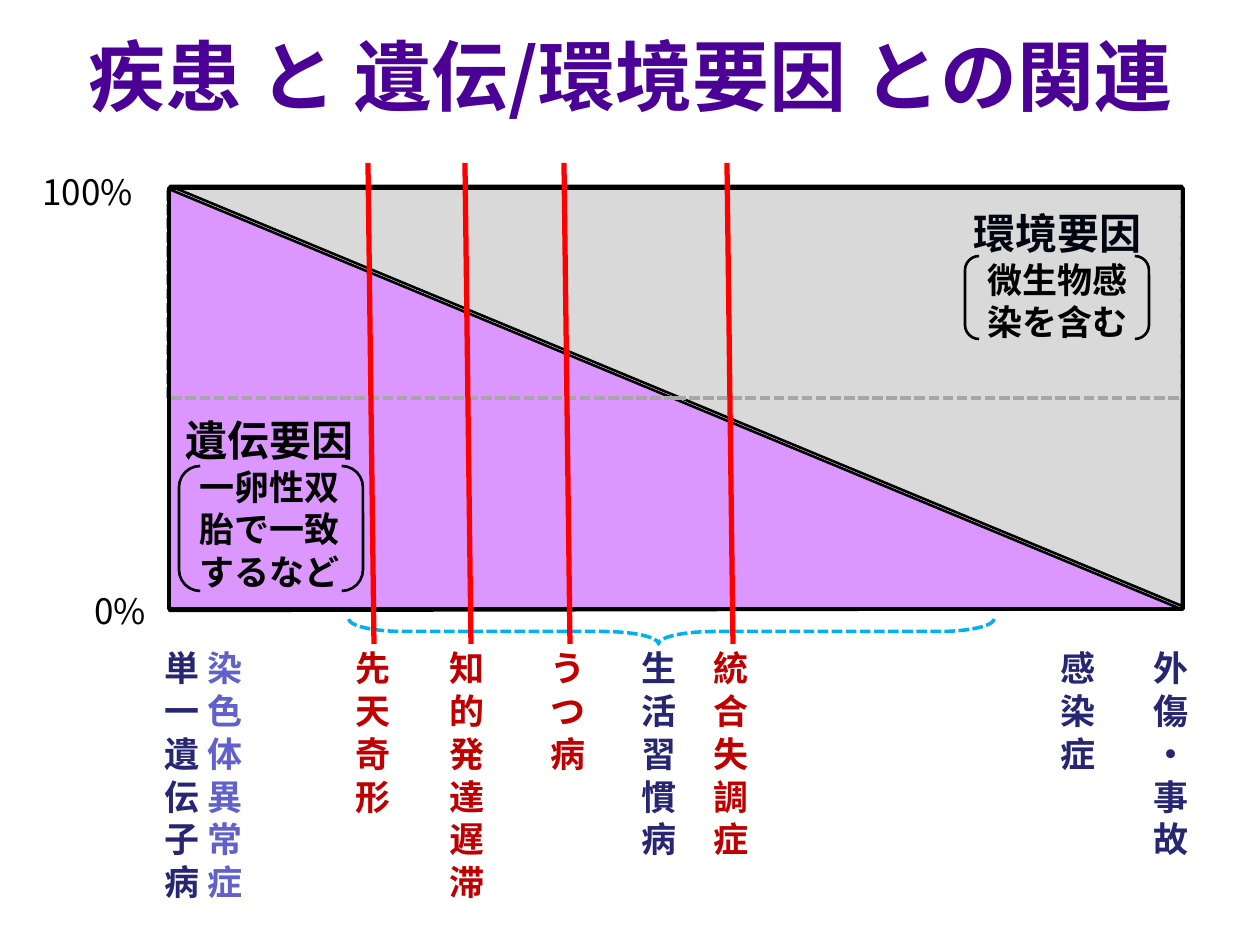
"""Build a slide relating diseases to genetic and environmental factors."""
from dataclasses import dataclass

from lxml import etree
from pptx import Presentation
from pptx.dml.color import RGBColor
from pptx.enum.dml import MSO_LINE
from pptx.enum.shapes import MSO_CONNECTOR, MSO_SHAPE
from pptx.enum.text import MSO_AUTO_SIZE, PP_ALIGN
from pptx.oxml.ns import qn
from pptx.util import Emu, Pt

STRAIGHT = MSO_CONNECTOR.STRAIGHT
BRACE = MSO_SHAPE.LEFT_BRACE
BRACKETS = MSO_SHAPE.DOUBLE_BRACKET
RECTANGLE = MSO_SHAPE.RECTANGLE
TRIANGLE = MSO_SHAPE.RIGHT_TRIANGLE
DASH = MSO_LINE.SQUARE_DOT
LEFT = PP_ALIGN.LEFT
CENTER = PP_ALIGN.CENTER
FIT_SHAPE = MSO_AUTO_SIZE.SHAPE_TO_FIT_TEXT
EMU_PER_PX = 914400 / 126


@dataclass(frozen=True)
class Theme:
    """Hold the colours, font and type sizes."""
    font: str = "Noto Sans CJK JP"
    title_size: int = 44
    heading_size: int = 24
    body_size: int = 20
    line_ratio: float = 1.22
    title: str = "4B0096"
    ink: str = "000000"
    environment_heading: str = "000510"
    genetic_fill: str = "DC97FF"
    environment_fill: str = "D9D9D9"
    midline: str = "A6A6A6"
    brace: str = "00B0F0"
    marker: str = "FF0000"
    disease: str = "262673"
    chromosome: str = "6161CB"
    marked_disease: str = "C00000"


THEME = Theme()


def px(length):
    """Turn pixels into EMU."""
    return Emu(round(length * EMU_PER_PX))


def rgb(color):
    """Turn a hex string into a colour."""
    return RGBColor.from_string(color)


def add_outline(slide, kind, box, color, width, fill=None, dash=None, rotation=0, adjustments=()):
    """Add a preset shape with a line and an optional fill."""
    shape = slide.shapes.add_shape(kind, *map(px, box))
    shape.shadow.inherit = False
    shape.rotation = rotation
    for index, value in enumerate(adjustments):
        shape.adjustments[index] = value
    if fill:
        shape.fill.solid()
        shape.fill.fore_color.rgb = rgb(fill)
    else:
        shape.fill.background()
    shape.line.color.rgb = rgb(color)
    shape.line.width = Pt(width)
    if dash:
        shape.line.dash_style = dash


def add_marker(slide, left):
    """Add a slightly slanted red line above a disease name."""
    line = slide.shapes.add_connector(STRAIGHT, px(left), px(163), px(left + 6), px(644))
    line.line.color.rgb = rgb(THEME.marker)
    line.line.width = Pt(3)
    etree.SubElement(line._element.spPr, qn("a:effectLst"))


def style_paragraph(paragraph, size, color, bold, align):
    """Set the font, line height and alignment of a paragraph."""
    paragraph.alignment = align
    paragraph.line_spacing = Pt(round(size * THEME.line_ratio, 1))
    font = paragraph.font
    font.name = THEME.font
    font.size = Pt(size)
    font.bold = bold
    font.color.rgb = rgb(color)
    properties = paragraph._p.get_or_add_pPr().find(qn("a:defRPr"))
    etree.SubElement(properties, qn("a:ea"), typeface=THEME.font)


def add_text(slide, box, lines, bold=True, align=LEFT, wrap=True):
    """Add a text box of (text, size, colour) lines and return its paragraphs."""
    frame = slide.shapes.add_textbox(*map(px, box)).text_frame
    frame.word_wrap = wrap
    frame.auto_size = FIT_SHAPE
    for index, (text, size, color) in enumerate(lines):
        paragraph = frame.add_paragraph() if index else frame.paragraphs[0]
        paragraph.text = text
        style_paragraph(paragraph, size, color, bold, align)
    return frame.paragraphs


def add_disease(slide, left, name, color, align=LEFT):
    """Add a disease name that runs down one narrow column."""
    box = (left, 640, 66, 42 * len(name) + 13)
    add_text(slide, box, [(name, THEME.body_size, color)], align=align)


def add_paired_diseases(slide):
    """Add the two disease names that run down side by side."""
    lines = [("", THEME.body_size, THEME.disease)] * 2
    paragraphs = add_text(slide, (152, 640, 117, 267), lines)
    pairs = list(zip("単一遺伝子病", "染色体異常症"))
    for paragraph, part in zip(paragraphs, (pairs[:4], pairs[4:])):
        for single_gene, chromosome in part:
            paragraph.add_run().text = single_gene + " "
            run = paragraph.add_run()
            run.text = chromosome
            run.font.color.rgb = rgb(THEME.chromosome)


def add_areas(slide):
    """Add the brace and the two triangular areas."""
    add_outline(slide, BRACE, (659, 309, 25, 645), THEME.brace, 2,
                dash=DASH, rotation=270, adjustments=(2.21, 0.48))
    add_outline(slide, TRIANGLE, (169, 188, 1012, 422), THEME.ink, 1.5,
                fill=THEME.genetic_fill, rotation=359.9)
    add_outline(slide, TRIANGLE, (170, 186, 1012, 420), THEME.ink, 1.5,
                fill=THEME.environment_fill, rotation=180)


def add_area_labels(slide):
    """Add the axis labels and the names of the two factors."""
    for box, text in (((30, 164, 139, 55), "100%"), ((82, 583, 86, 55), "0%")):
        add_text(slide, box, [(text, THEME.body_size, THEME.ink)], bold=False, wrap=False)
    add_text(slide, (171, 407, 197, 192), [
        ("遺伝要因", THEME.heading_size, THEME.ink),
        ("一卵性双胎で一致するなど", THEME.body_size, THEME.ink),
    ], align=CENTER)
    add_text(slide, (944, 200, 228, 149), [
        ("環境要因", THEME.heading_size, THEME.environment_heading),
        ("微生物感", THEME.body_size, THEME.ink),
        ("染を含む", THEME.body_size, THEME.ink),
    ], align=CENTER)


def add_frames(slide):
    """Add the brackets, the dashed upper half and the outer frame."""
    for box in ((965, 256, 184, 83), (179, 466, 184, 125)):
        add_outline(slide, BRACKETS, box, THEME.ink, 1.5, adjustments=(0.17,))
    add_outline(slide, RECTANGLE, (168, 188, 1014, 210), THEME.midline, 2, dash=DASH)
    add_outline(slide, RECTANGLE, (169, 188, 1014, 421), THEME.ink, 2)


def main():
    """Build and save the slide."""
    presentation = Presentation()
    presentation.slide_width, presentation.slide_height = px(1260), px(945)
    slide = presentation.slides.add_slide(presentation.slide_layouts[6])
    add_areas(slide)
    add_area_labels(slide)
    add_paired_diseases(slide)
    for left, name in ((343, "先天奇形"), (437, "知的発達遅滞"), (538, "うつ病"), (701, "統合失調症")):
        add_disease(slide, left, name, THEME.marked_disease)
    for left, name, align in ((629, "生活習慣病", LEFT), (1048, "感染症", LEFT),
                              (1138, "外傷・事故", CENTER)):
        add_disease(slide, left, name, THEME.disease, align)
    add_frames(slide)
    for left in (368, 465, 564, 727):
        add_marker(slide, left)
    add_text(slide, (0, 21, 1260, 106),
             [("疾患 と 遺伝/環境要因 との関連", THEME.title_size, THEME.title)], align=CENTER)
    presentation.save("out.pptx")


if __name__ == "__main__":
    main()
